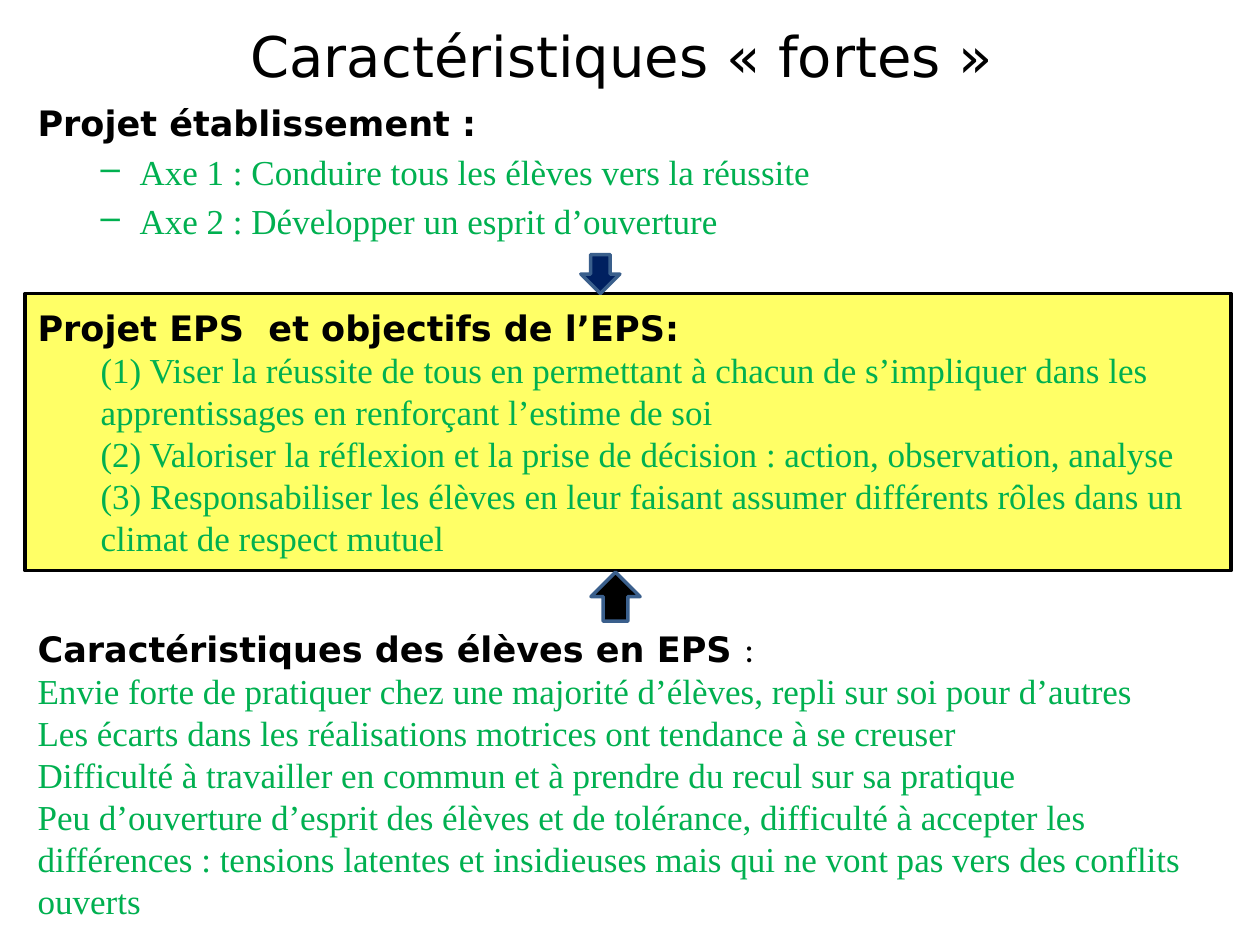
from lxml import etree
from pptx import Presentation
from pptx import util as u
from pptx.dml.color import RGBColor
from pptx.enum import shapes, text
from pptx.oxml.ns import qn

COLORS = {"black": "000000", "green": "00B050", "yellow": "FFFF66",
          "navy": "002060", "arrow_line": "3A5F8C"}
HEADING, BODY, PLAIN = "DejaVu Sans", "Times New Roman", "Calibri"


def rgb(name):
    return RGBColor.from_string(COLORS[name])


def format_run(run, font=BODY, color="green", size=20, bold=False):
    run.font.name = font
    run.font.size = u.Pt(size)
    run.font.bold = bold
    run.font.color.rgb = rgb(color)


def indent(paragraph, left, first=0, bullet=None):
    props = paragraph._p.get_or_add_pPr()
    props.set("marL", str(u.Inches(left)))
    props.set("indent", str(u.Inches(first)))
    if bullet:
        etree.SubElement(props, qn("a:buChar")).set("char", bullet)


def write_section(frame, heading, lines):
    """Bold heading followed by green lines; returns the paragraphs."""
    frame.word_wrap = True
    frame.text = "\n".join([heading, *lines])
    for i, paragraph in enumerate(frame.paragraphs):
        paragraph.alignment = text.PP_ALIGN.LEFT
        for run in paragraph.runs:
            if i == 0:
                format_run(run, HEADING, "black", bold=True)
            else:
                format_run(run)
    return frame.paragraphs


def add_block(slide, kind, box, fill, line):
    block = slide.shapes.add_shape(kind, *map(u.Inches, box))
    block.shadow.inherit = False
    block.fill.solid()
    block.fill.fore_color.rgb = rgb(fill)
    block.line.color.rgb = rgb(line)
    block.line.width = u.Pt(2)
    return block


def add_title(slide, box):
    frame = slide.shapes.add_textbox(*map(u.Inches, box)).text_frame
    frame.word_wrap = True
    frame.vertical_anchor = text.MSO_ANCHOR.MIDDLE
    frame.text = "Caractéristiques « fortes » "
    frame.paragraphs[0].alignment = text.PP_ALIGN.CENTER
    format_run(frame.paragraphs[0].runs[0], HEADING, "black", 32)


def add_school_project(slide, box):
    frame = slide.shapes.add_textbox(*map(u.Inches, box)).text_frame
    heading, *axes = write_section(frame, "Projet établissement :", [
        "Axe 1 : Conduire tous les élèves vers la réussite",
        "Axe 2 : Développer un esprit d’ouverture"])
    indent(heading, 0.38, -0.38)
    for axis in axes:
        axis.space_before = u.Pt(4)
        indent(axis, 0.81, -0.31, "–")


def add_eps_project(slide, box):
    block = add_block(slide, shapes.MSO_SHAPE.FLOWCHART_PROCESS, box, "yellow", "black")
    block.text_frame.vertical_anchor = text.MSO_ANCHOR.MIDDLE
    _, *goals = write_section(block.text_frame, "Projet EPS  et objectifs de l’EPS:", [
        "(1) Viser la réussite de tous en permettant à chacun de s’impliquer dans les "
        "apprentissages en renforçant l’estime de soi",
        "(2) Valoriser la réflexion et la prise de décision : action, observation, analyse",
        "(3) Responsabiliser les élèves en leur faisant assumer différents rôles dans un "
        "climat de respect mutuel"])
    for goal in goals:
        indent(goal, 0.5)


def add_pupils(slide, box):
    frame = slide.shapes.add_textbox(*map(u.Inches, box)).text_frame
    heading, *_ = write_section(frame, "Caractéristiques des élèves en EPS ", [
        "Envie forte de pratiquer chez une majorité d’élèves, repli sur soi pour d’autres",
        "Les écarts dans les réalisations motrices ont tendance à se creuser",
        "Difficulté à travailler en commun et à prendre du recul sur sa pratique",
        "Peu d’ouverture d’esprit des élèves et de tolérance, difficulté à accepter les "
        "différences : tensions latentes et insidieuses mais qui ne vont pas vers des "
        "conflits ouverts"])
    colon = heading.add_run()
    colon.text = ":"
    format_run(colon, PLAIN, "black")


def main():
    deck = Presentation()
    deck.slide_width, deck.slide_height = u.Inches(10), u.Inches(7.5)
    slide = deck.slides.add_slide(deck.slide_layouts[6])

    add_title(slide, (0.51, 0.21, 9, 0.46))
    add_school_project(slide, (0.2, 0.76, 9, 1.26))
    add_eps_project(slide, (0.2, 2.33, 9.57, 2.2))
    add_pupils(slide, (0.2, 4.93, 9.61, 2.46))

    # Arrows pointing to the central project
    add_block(slide, shapes.MSO_SHAPE.DOWN_ARROW, (4.61, 2.02, 0.31, 0.31),
              "navy", "arrow_line")
    add_block(slide, shapes.MSO_SHAPE.UP_ARROW, (4.69, 4.54, 0.39, 0.39),
              "black", "arrow_line")
    deck.save("out.pptx")


if __name__ == "__main__":
    main()
